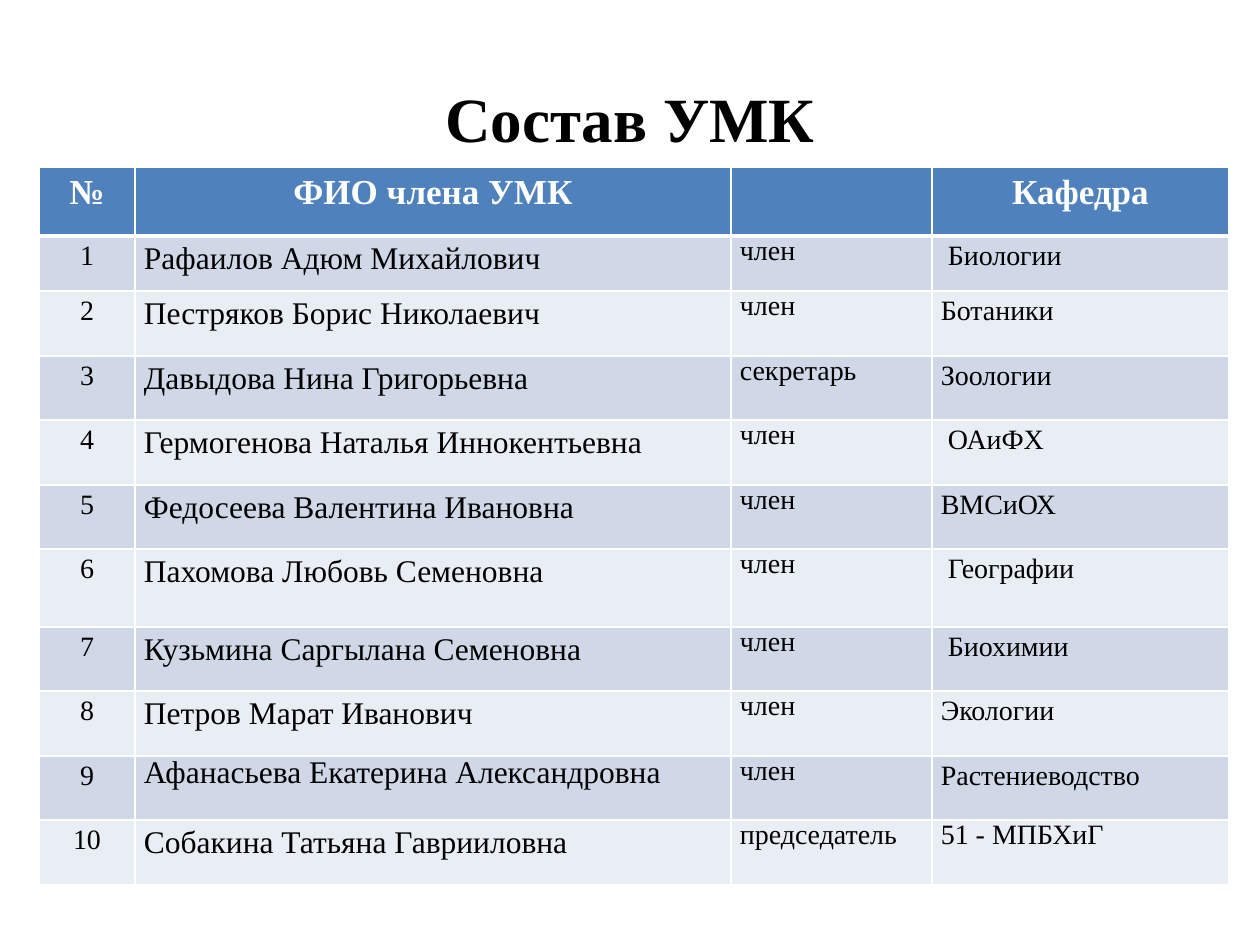
from lxml import etree
from pptx import Presentation
from pptx import util as u
from pptx.dml import color
from pptx.enum import text
from pptx.oxml import ns

SCALE = 914400 // 126  # EMU per px
FONT = "Times New Roman"
COLORS = {
    "black": "000000",
    "white": "FFFFFF",
    "header": "4F81BD",
    "odd": "D0D8E8",
    "even": "E9EDF4",
}
ALIGN = text.PP_ALIGN

COLUMN_WIDTHS = [96, 596, 201, 297]
ROW_HEIGHTS = [69, 55, 65, 64, 65, 64, 78, 64, 65, 64, 65]
HEADER = ["№", "ФИО члена УМК", "", "Кафедра"]
MEMBERS = [
    ("Рафаилов Адюм Михайлович", "член", " Биологии"),
    ("Пестряков Борис Николаевич", "член", "Ботаники"),
    ("Давыдова Нина Григорьевна", "секретарь", "Зоологии"),
    ("Гермогенова Наталья Иннокентьевна", "член", " ОАиФХ"),
    ("Федосеева Валентина Ивановна", "член", "ВМСиОХ"),
    ("Пахомова Любовь Семеновна", "член", " Географии"),
    ("Кузьмина Саргылана Семеновна", "член", " Биохимии"),
    ("Петров Марат Иванович", "член", "Экологии"),
    ("Афанасьева Екатерина Александровна", "член", "Растениеводство"),
    ("Собакина Татьяна Гаврииловна", "председатель", "51 - МПБХиГ"),
]
# Format of each body column
COLUMN_FORMATS = [
    {"size": 16, "align": ALIGN.CENTER, "spacing": 1.15},
    {"size": 18, "align": ALIGN.LEFT, "spacing": 1.15},
    {"size": 16, "align": ALIGN.LEFT},
    {"size": 16, "align": ALIGN.JUSTIFY, "spacing": 1.15},
]
# Cells set with single line spacing, as (row, column)
SINGLE_SPACED = {(9, 1), (10, 3)}


def px(length):
    return u.Emu(length * SCALE)


def write(frame, content, size=16, ink="black", bold=False, align=ALIGN.LEFT, spacing=1.0):
    paragraph = frame.paragraphs[0]
    paragraph.alignment = align
    paragraph.line_spacing = spacing
    if not content:
        return
    run = paragraph.add_run()
    run.text = content
    run.font.name = FONT
    run.font.size = u.Pt(size)
    run.font.bold = bold
    run.font.color.rgb = color.RGBColor.from_string(COLORS[ink])


class SlideBuilder:
    def __init__(self, slide):
        self.slide = slide

    def title(self, content, left, top, width, height):
        shape = self.slide.shapes.title
        shape.left, shape.top, shape.width, shape.height = map(px, (left, top, width, height))
        shape.text_frame.vertical_anchor = text.MSO_ANCHOR.MIDDLE
        write(shape.text_frame, content, size=36, bold=True, align=ALIGN.CENTER)

    def border(self, cell, side, points):
        properties = cell._tc.get_or_add_tcPr()
        line = etree.SubElement(properties, ns.qn(f"a:ln{side}"), w=str(u.Pt(points)))
        fill = etree.SubElement(line, ns.qn("a:solidFill"))
        etree.SubElement(fill, ns.qn("a:srgbClr"), val=COLORS["white"])

    def cell(self, cell, content, fill, top=1, bottom=1, **style):
        cell.margin_left = cell.margin_right = px(9)
        cell.margin_top = cell.margin_bottom = 0
        for side, points in (("L", 1), ("R", 1), ("T", top), ("B", bottom)):
            self.border(cell, side, points)
        cell.fill.solid()
        cell.fill.fore_color.rgb = color.RGBColor.from_string(COLORS[fill])
        write(cell.text_frame, content, **style)

    def table(self, left, top):
        table = self.slide.shapes.add_table(
            len(ROW_HEIGHTS), len(COLUMN_WIDTHS), px(left), px(top),
            px(sum(COLUMN_WIDTHS)), px(sum(ROW_HEIGHTS))).table
        for column, width in zip(table.columns, COLUMN_WIDTHS):
            column.width = px(width)
        for row, height in zip(table.rows, ROW_HEIGHTS):
            row.height = px(height)

        # Header row
        for index, content in enumerate(HEADER):
            self.cell(table.cell(0, index), content, "header", bottom=3, size=20,
                      ink="white", bold=True, align=ALIGN.CENTER, spacing=1.15)

        # Numbered members in alternating bands
        for number, member in enumerate(MEMBERS, 1):
            band = "odd" if number % 2 else "even"
            for index, content in enumerate((str(number), *member)):
                style = dict(COLUMN_FORMATS[index])
                if (number, index) in SINGLE_SPACED:
                    style["spacing"] = 1.0
                self.cell(table.cell(number, index), content, band,
                          top=3 if number == 1 else 1, **style)


def main():
    presentation = Presentation()
    presentation.slide_width = px(1260)
    presentation.slide_height = px(945)
    slide = presentation.slides.add_slide(presentation.slide_layouts[5])
    builder = SlideBuilder(slide)
    builder.title("Состав УМК", 63, 38, 1134, 158)
    builder.table(39, 167)
    presentation.save("out.pptx")


if __name__ == "__main__":
    main()
